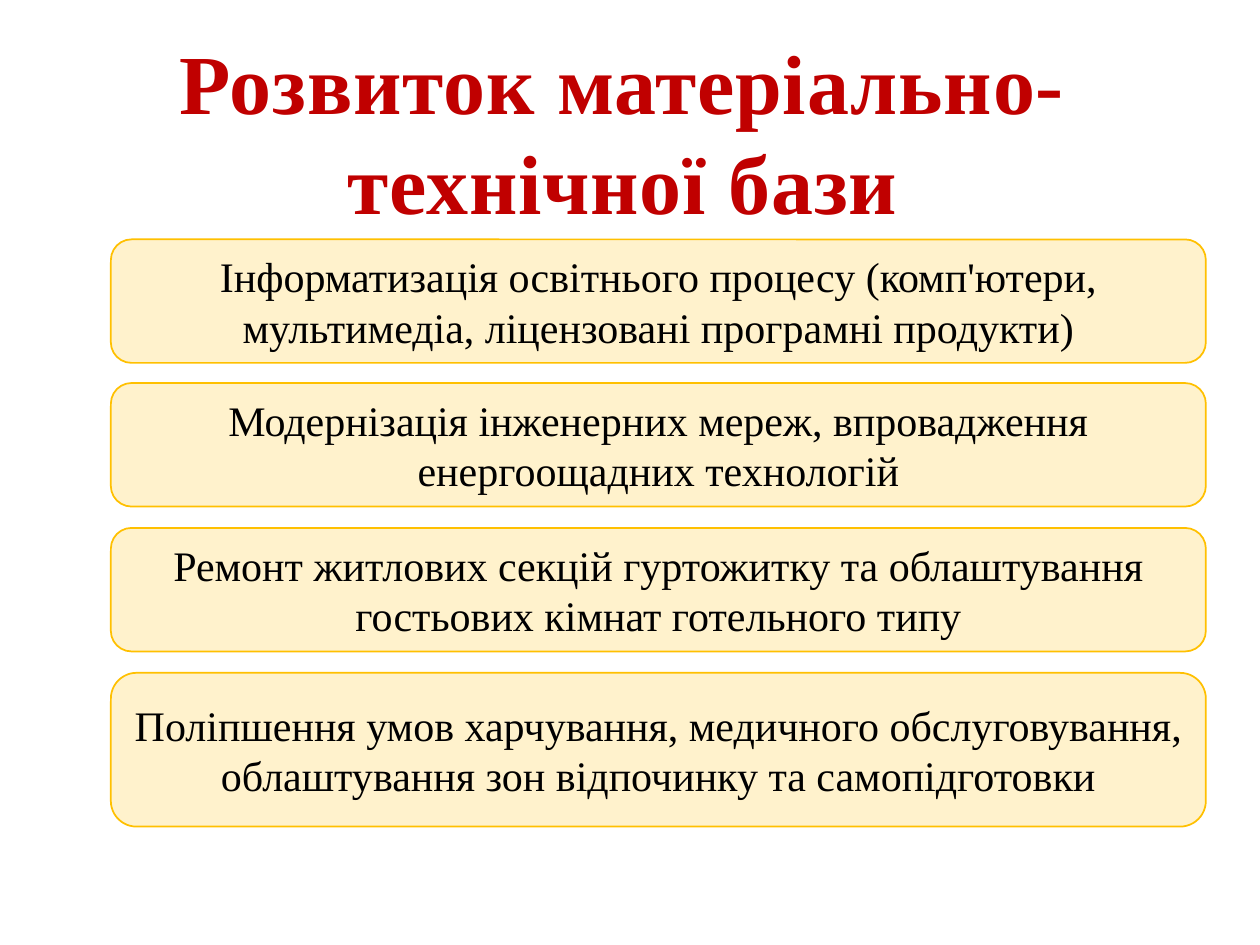
from pptx import Presentation
from pptx.dml.color import RGBColor
from pptx.enum.shapes import MSO_SHAPE
from pptx.enum.text import MSO_ANCHOR, PP_ALIGN
from pptx.util import Inches, Pt

ROUNDED = MSO_SHAPE.ROUNDED_RECTANGLE
MIDDLE = MSO_ANCHOR.MIDDLE
CENTER = PP_ALIGN.CENTER
FONT = "Times New Roman"
TITLE = "Розвиток матеріально-технічної бази"
MEASURES = [
    (1.9, 0.98, "Інформатизація освітнього процесу (комп'ютери, мультимедіа, ліцензовані програмні продукти)"),
    (3.04, 0.98, "Модернізація інженерних мереж, впровадження енергоощадних технологій"),
    (4.19, 0.98, "Ремонт житлових секцій гуртожитку та облаштування гостьових кімнат готельного типу"),
    (5.34, 1.22, "Поліпшення умов харчування, медичного обслуговування, "
                 "облаштування зон відпочинку та самопідготовки"),
]


def color(hex_string):
    """Return the colour for a hex string."""
    return RGBColor.from_string(hex_string)


def write_text(shape, text, size, hex_string, bold=False):
    """Fill a shape with one centred paragraph and return its run."""
    text_frame = shape.text_frame
    text_frame.word_wrap = True
    text_frame.text = text
    paragraph = text_frame.paragraphs[0]
    paragraph.alignment = CENTER
    run = paragraph.runs[0]
    run.font.name = FONT
    run.font.size = Pt(size)
    run.font.bold = bold
    run.font.color.rgb = color(hex_string)
    return run


def add_title(slide, left, top, width, height):
    """Place the slightly letter-spaced heading in the given box."""
    title = slide.shapes.add_textbox(left, top, width, height)
    run = write_text(title, TITLE, 48, "C00000", bold=True)
    run.font._element.set("spc", "50")


def add_measure(slide, left, top, width, height, text):
    """Place one rounded panel naming a measure."""
    panel = slide.shapes.add_shape(ROUNDED, left, top, width, height)
    panel.shadow.inherit = False
    panel.fill.solid()
    panel.fill.fore_color.rgb = color("FFF2CC")
    panel.line.color.rgb = color("FFC000")
    panel.line.width = Pt(1)
    panel.text_frame.vertical_anchor = MIDDLE
    write_text(panel, text, 24, "000000")


def main():
    """Build and save the slide."""
    presentation = Presentation()
    presentation.slide_width = Inches(10)
    presentation.slide_height = Inches(7.5)
    slide = presentation.slides.add_slide(presentation.slide_layouts[6])
    add_title(slide, Inches(0.31), Inches(0.19), Inches(9.27), Inches(1.72))
    for top, height, text in MEASURES:
        add_measure(slide, Inches(0.88), Inches(top), Inches(8.69), Inches(height), text)
    presentation.save("out.pptx")


if __name__ == "__main__":
    main()
